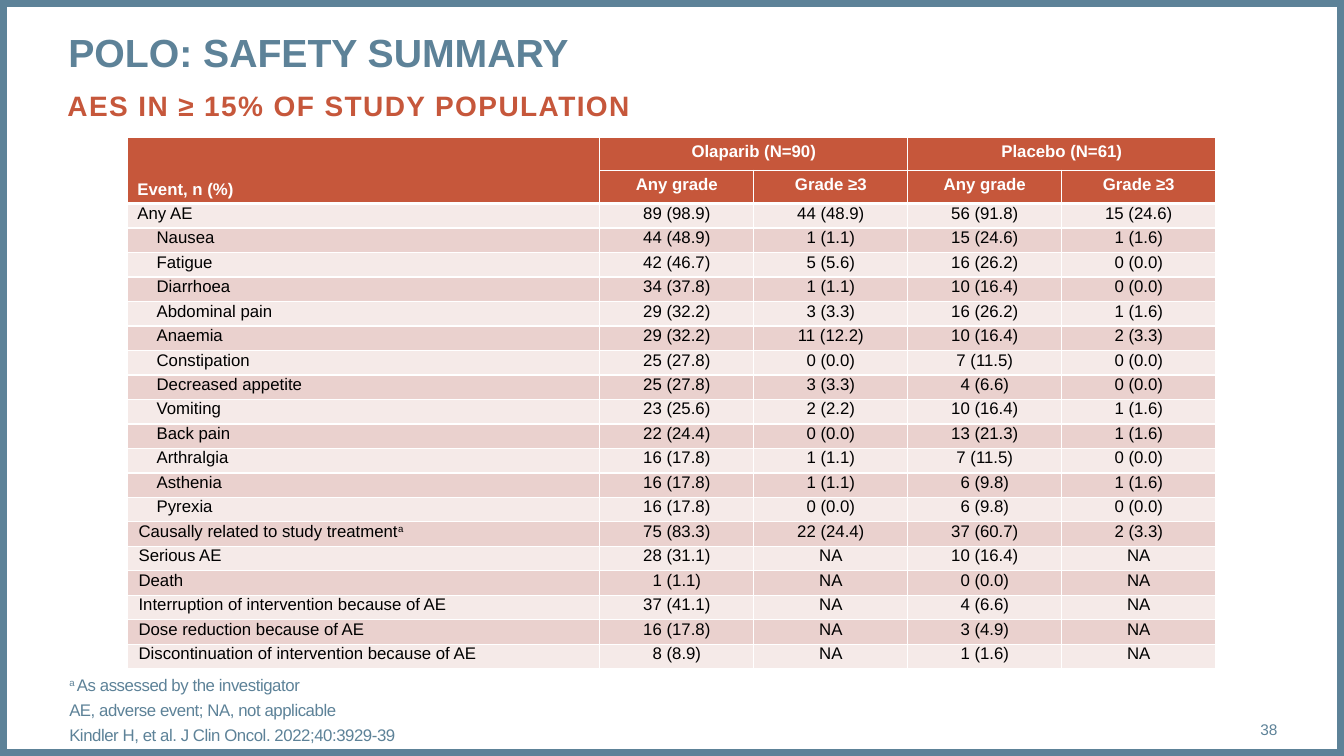
from lxml import etree
from pptx import Presentation
from pptx.dml.color import RGBColor
from pptx.enum.shapes import MSO_SHAPE
from pptx.enum.text import MSO_ANCHOR, PP_ALIGN
from pptx.oxml.ns import qn
from pptx.util import Pt

SLATE = RGBColor(0x5D, 0x82, 0x98)
RUST = RGBColor(0xC6, 0x57, 0x3B)
PALE = RGBColor(0xF5, 0xEA, 0xE8)
BLUSH = RGBColor(0xEA, 0xD1, 0xCE)
WHITE = RGBColor(0xFF, 0xFF, 0xFF)
BLACK = RGBColor(0, 0, 0)

SLIDE_WIDTH, SLIDE_HEIGHT = 960, 540
EVENT_WIDTH, VALUE_WIDTH = 337.5, 110
HEADER_HEIGHT, BODY_HEIGHT = 23.76, 17.5
SYMPTOM_INDENT, SUMMARY_INDENT = 13.7, 0.8

ARMS = ["Olaparib (N=90)", "Placebo (N=61)"]
GRADES = ["Any grade", "Grade ≥3"]
ANY_AE = [("Any AE", "89 (98.9)", "44 (48.9)", "56 (91.8)", "15 (24.6)")]
SYMPTOMS = [
    ("Nausea", "44 (48.9)", "1 (1.1)", "15 (24.6)", "1 (1.6)"),
    ("Fatigue", "42 (46.7)", "5 (5.6)", "16 (26.2)", "0 (0.0)"),
    ("Diarrhoea", "34 (37.8)", "1 (1.1)", "10 (16.4)", "0 (0.0)"),
    ("Abdominal pain", "29 (32.2)", "3 (3.3)", "16 (26.2)", "1 (1.6)"),
    ("Anaemia", "29 (32.2)", "11 (12.2)", "10 (16.4)", "2 (3.3)"),
    ("Constipation", "25 (27.8)", "0 (0.0)", "7 (11.5)", "0 (0.0)"),
    ("Decreased appetite", "25 (27.8)", "3 (3.3)", "4 (6.6)", "0 (0.0)"),
    ("Vomiting", "23 (25.6)", "2 (2.2)", "10 (16.4)", "1 (1.6)"),
    ("Back pain", "22 (24.4)", "0 (0.0)", "13 (21.3)", "1 (1.6)"),
    ("Arthralgia", "16 (17.8)", "1 (1.1)", "7 (11.5)", "0 (0.0)"),
    ("Asthenia", "16 (17.8)", "1 (1.1)", "6 (9.8)", "1 (1.6)"),
    ("Pyrexia", "16 (17.8)", "0 (0.0)", "6 (9.8)", "0 (0.0)"),
]
SUMMARIES = [
    ("Causally related to study treatment^a", "75 (83.3)", "22 (24.4)", "37 (60.7)", "2 (3.3)"),
    ("Serious AE", "28 (31.1)", "NA", "10 (16.4)", "NA"),
    ("Death", "1 (1.1)", "NA", "0 (0.0)", "NA"),
    ("Interruption of intervention because of AE", "37 (41.1)", "NA", "4 (6.6)", "NA"),
    ("Dose reduction because of AE", "16 (17.8)", "NA", "3 (4.9)", "NA"),
    ("Discontinuation of intervention because of AE", "8 (8.9)", "NA", "1 (1.6)", "NA"),
]
FOOTNOTES = [
    "^a ^As assessed by the investigator",
    "AE, adverse event; NA, not applicable",
    "Kindler H, et al. J Clin Oncol. 2022;40:3929-39",
]


def write_text(frame, text, size=12, color=BLACK, bold=False, align=PP_ALIGN.LEFT,
               spacing=0, gap=0, line_spacing=None, indent=0):
    """Write one paragraph per line; carets enclose superscript parts."""
    for number, line in enumerate(text.split("\n")):
        para = frame.add_paragraph() if number else frame.paragraphs[0]
        para.alignment = align
        if number and gap:
            para.space_before = Pt(gap)
        if line_spacing:
            para.line_spacing = line_spacing
        if indent:
            para._p.get_or_add_pPr().set("marL", str(Pt(indent)))
        for part, content in enumerate(line.split("^")):
            if not content:
                continue
            span = para.add_run()
            span.text = content
            span.font.name = "Arial"
            span.font.size = Pt(size)
            span.font.bold = bold
            span.font.color.rgb = color
            properties = span._r.get_or_add_rPr()
            if spacing:
                properties.set("spc", str(round(spacing * 100)))
            if part % 2:
                properties.set("baseline", "30000")
        if not line:
            etree.SubElement(para._p, qn("a:endParaRPr"), sz=str(size * 100))


def add_text_box(page, left, top, width, height, text, anchor=MSO_ANCHOR.TOP, **style):
    box = page.shapes.add_textbox(Pt(left), Pt(top), Pt(width), Pt(height))
    frame = box.text_frame
    frame.word_wrap = True
    frame.margin_left = frame.margin_right = frame.margin_top = frame.margin_bottom = 0
    frame.vertical_anchor = anchor
    write_text(frame, text, **style)


def style_cell(cell, fill, top=1, bottom=1):
    """Fill a cell and draw white borders; a width of 0 hides that border."""
    properties = cell._tc.get_or_add_tcPr()
    for side, width in (("L", 1), ("R", 1), ("T", top), ("B", bottom)):
        border = etree.SubElement(properties, qn(f"a:ln{side}"), w=str(Pt(width)))
        if width:
            paint = etree.SubElement(border, qn("a:solidFill"))
            etree.SubElement(paint, qn("a:srgbClr"), val=str(WHITE))
        else:
            etree.SubElement(border, qn("a:noFill"))
    cell.fill.solid()
    cell.fill.fore_color.rgb = fill


def fill_header(table):
    arm_row = ["", ARMS[0], "", ARMS[1], ""]
    grade_row = ["Event, n (%)"] + GRADES * len(ARMS)
    for column, (arm, grade) in enumerate(zip(arm_row, grade_row)):
        align = PP_ALIGN.CENTER if column else PP_ALIGN.LEFT
        divider = 1 if column else 0
        for row, text in enumerate((arm, grade)):
            cell = table.cell(row, column)
            write_text(cell.text_frame, text, color=WHITE, bold=True, align=align)
            style_cell(cell, RUST, top=divider if row else 1, bottom=3 if row else divider)
    table.cell(1, 0).vertical_anchor = MSO_ANCHOR.BOTTOM
    for column in (1, 3):
        table.cell(0, column).merge(table.cell(0, column + 1))


def fill_body(table, groups):
    row = 2
    for indent, events in groups:
        for event in events:
            for column, text in enumerate(event):
                cell = table.cell(row, column)
                cell.margin_top = cell.margin_bottom = Pt(1.44)
                write_text(cell.text_frame, text, line_spacing=0.9,
                           align=PP_ALIGN.CENTER if column else PP_ALIGN.LEFT,
                           indent=0 if column else indent)
                style_cell(cell, BLUSH if row % 2 else PALE, top=3 if row == 2 else 1)
            row += 1


def add_event_table(page, left, top):
    groups = [(0, ANY_AE), (SYMPTOM_INDENT, SYMPTOMS), (SUMMARY_INDENT, SUMMARIES)]
    widths = [EVENT_WIDTH] + [VALUE_WIDTH] * 4
    heights = [HEADER_HEIGHT] * 2 + [BODY_HEIGHT] * sum(len(events) for _, events in groups)
    table = page.shapes.add_table(len(heights), len(widths), Pt(left), Pt(top),
                                  Pt(sum(widths)), Pt(sum(heights))).table
    table.first_row = table.horz_banding = False
    for column, width in zip(table.columns, widths):
        column.width = Pt(width)
    for row, height in zip(table.rows, heights):
        row.height = Pt(height)
    fill_header(table)
    fill_body(table, groups)


def add_slide_frame(page, width, height):
    border = page.shapes.add_shape(MSO_SHAPE.RECTANGLE, 0, 0, Pt(width), Pt(height))
    border.shadow.inherit = False
    border.fill.background()
    border.line.color.rgb = SLATE
    border.line.width = Pt(10)


def add_headings(page, left, top, width):
    add_text_box(page, left, top + 43, width, 55, "AES IN ≥ 15% OF STUDY POPULATION",
                 size=20, color=RUST, bold=True, spacing=1)
    add_text_box(page, left + 0.7, top, width, 68, "POLO: SAFETY SUMMARY",
                 size=28, color=SLATE, bold=True)


def add_footer(page, left, top, width):
    number_width = 62
    add_text_box(page, left, top, width - number_width, 29, "\n".join(FOOTNOTES),
                 anchor=MSO_ANCHOR.MIDDLE, color=SLATE, spacing=-0.3, gap=3.5)
    add_text_box(page, left + width - number_width, top + 13.7, number_width, 29, "38",
                 anchor=MSO_ANCHOR.MIDDLE, size=11, color=SLATE, align=PP_ALIGN.RIGHT)


def main():
    deck = Presentation()
    deck.slide_width, deck.slide_height = Pt(SLIDE_WIDTH), Pt(SLIDE_HEIGHT)
    page = deck.slides.add_slide(deck.slide_layouts[6])
    add_slide_frame(page, SLIDE_WIDTH, SLIDE_HEIGHT)
    add_headings(page, 48.2, 20.2, 864)
    add_footer(page, 49.5, 492.5, 863)
    add_event_table(page, 91, 97.9)
    deck.save("out.pptx")


if __name__ == "__main__":
    main()
